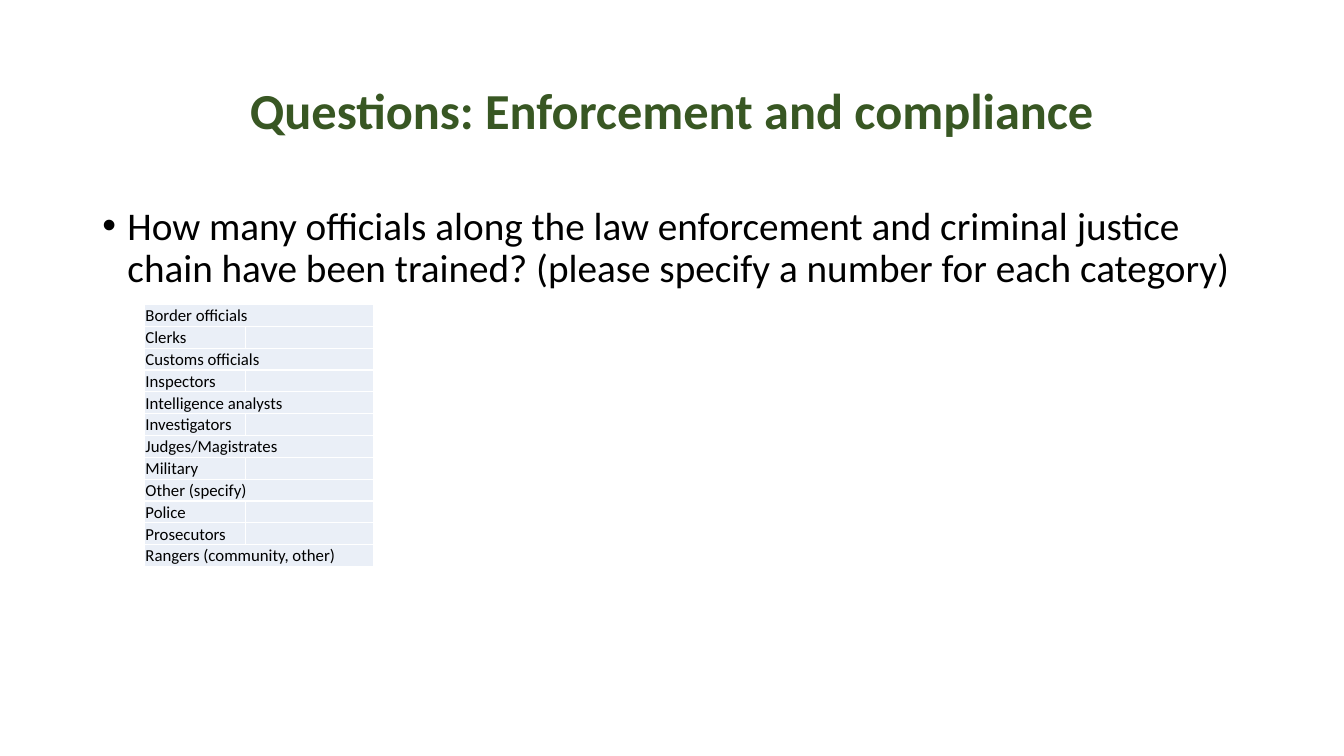
from pptx import Presentation
from pptx.dml.color import RGBColor
from pptx.enum.text import MSO_ANCHOR as Anchor, PP_ALIGN as Align
from pptx.oxml import parse_xml
from pptx.oxml.ns import nsdecls
from pptx.util import Pt

GREEN = RGBColor(0x38, 0x57, 0x23)
BLACK = RGBColor(0, 0, 0)
PALE_BLUE = RGBColor(0xEA, 0xEF, 0xF7)
WHITE = RGBColor(0xFF, 0xFF, 0xFF)

OFFICIALS = [
    "Border officials", "Clerks", "Customs officials", "Inspectors",
    "Intelligence analysts", "Investigators", "Judges/Magistrates", "Military",
    "Other (specify)", "Police", "Prosecutors", "Rangers (community, other)",
]
LONGEST_SINGLE = 13  # longer names span both columns
ROW_HEIGHT = 15.6


def write(paragraph, text, size, color, bold=False):
    run = paragraph.add_run()
    run.text = text
    font_format = {"name": "Calibri", "size": Pt(size), "bold": bold}
    for name, value in font_format.items():
        setattr(run.font, name, value)
    run.font.color.rgb = color


def add_text(top, height, anchor):
    shape = slide.shapes.add_textbox(Pt(66), Pt(top), Pt(828), Pt(height))
    frame = shape.text_frame
    frame.word_wrap = True
    frame.vertical_anchor = anchor
    paragraph = frame.paragraphs[0]
    paragraph.line_spacing = 0.9
    return paragraph


presentation = Presentation()
presentation.slide_width, presentation.slide_height = Pt(960), Pt(540)
slide = presentation.slides.add_slide(presentation.slide_layouts[6])

# Title
title = add_text(28.75, 104.4, Anchor.MIDDLE)
title.alignment = Align.CENTER
write(title, "Questions: Enforcement and compliance", 36, GREEN, bold=True)

# Question with bullet
question = add_text(143.75, 342.6, Anchor.TOP)
question.space_before = Pt(10)
write(question, "How many officials along the law enforcement and criminal justice "
      "chain have been trained? (please specify a number for each category)", 28, BLACK)
properties = question._p.get_or_add_pPr()
properties.set("marL", str(Pt(18)))
properties.set("indent", str(Pt(-18)))
properties.append(parse_xml(f'<a:buFont {nsdecls("a")} typeface="Arial"/>'))
properties.append(parse_xml(f'<a:buChar {nsdecls("a")} char="•"/>'))

# Table of officials
table = slide.shapes.add_table(
    len(OFFICIALS), 2, Pt(103.2), Pt(217.5), Pt(163.8), Pt(ROW_HEIGHT * len(OFFICIALS))
).table
table.first_row = table.horz_banding = False
for column, width in zip(table.columns, (72.2, 91.6)):
    column.width = Pt(width)

cell_format = {
    "margin_left": Pt(0.7), "margin_right": Pt(0.7), "margin_top": Pt(0.7),
    "margin_bottom": Pt(0), "vertical_anchor": Anchor.BOTTOM,
}
for row, official in enumerate(OFFICIALS):
    table.rows[row].height = Pt(ROW_HEIGHT)
    for cell in table.rows[row].cells:
        for name, value in cell_format.items():
            setattr(cell, name, value)
        for side in ("lnL", "lnR", "lnT", "lnB"):
            cell._tc.get_or_add_tcPr().append(parse_xml(
                f'<a:{side} {nsdecls("a")} w="{Pt(1)}"><a:solidFill>'
                f'<a:srgbClr val="{WHITE}"/></a:solidFill></a:{side}>'))
        cell.fill.solid()
        cell.fill.fore_color.rgb = PALE_BLUE
    name_cell, number_cell = table.cell(row, 0), table.cell(row, 1)
    write(name_cell.text_frame.paragraphs[0], official, 12, BLACK)
    # Small type keeps the empty cell within the row height
    number_cell.text_frame.paragraphs[0]._p.append(
        parse_xml(f'<a:endParaRPr {nsdecls("a")} sz="1200"/>'))
    if len(official) > LONGEST_SINGLE:
        name_cell.merge(number_cell)

presentation.save("out.pptx")
